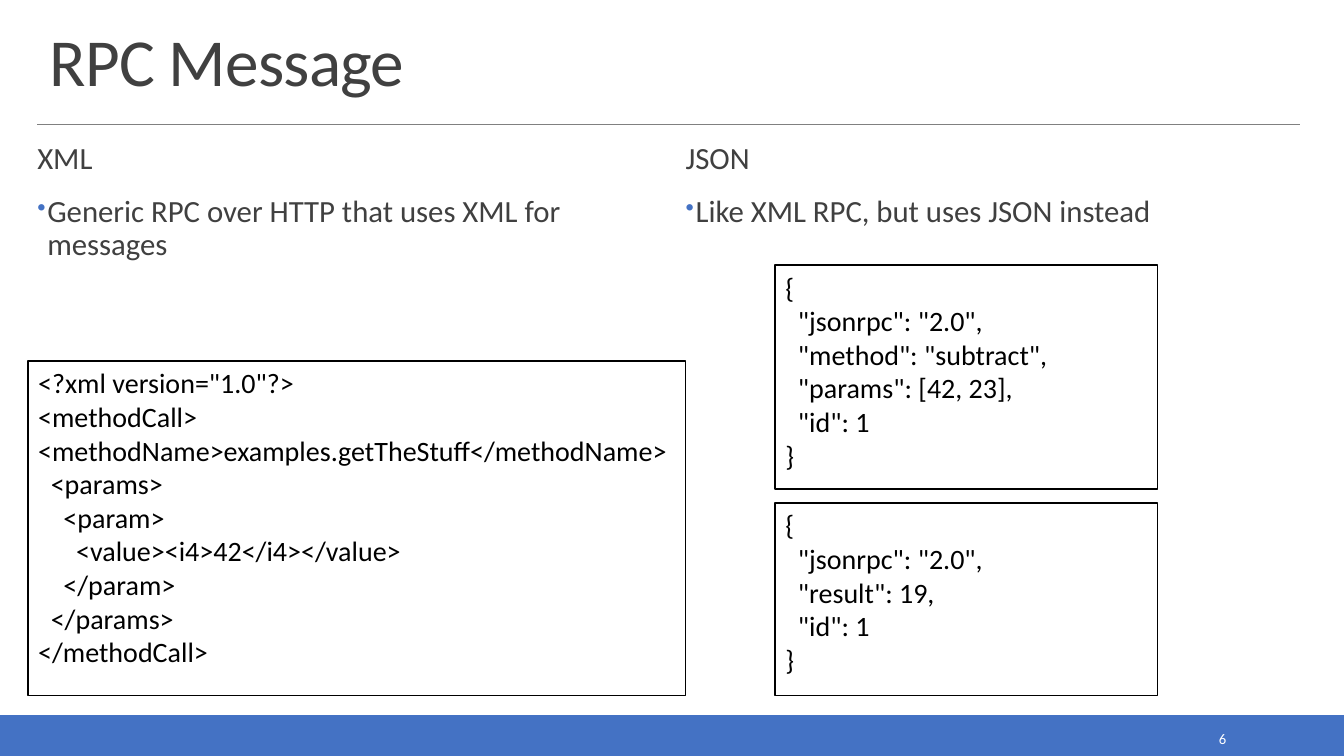
from lxml import etree
from pptx import Presentation
from pptx.dml.color import RGBColor
from pptx.enum.shapes import MSO_CONNECTOR as CONNECTOR, MSO_SHAPE as SHAPE
from pptx.enum.text import MSO_ANCHOR as ANCHOR, PP_ALIGN as ALIGN
from pptx.oxml.ns import qn
from pptx.util import Inches, Pt

FONT = "Calibri"
COLORS = {
    "accent": "4472C4",
    "rule": "808080",
    "text": "404040",
    "code": "000000",
    "white": "FFFFFF",
}

XML_CALL = """<?xml version="1.0"?>
<methodCall>
<methodName>examples.getTheStuff</methodName>
  <params>
    <param>
      <value><i4>42</i4></value>
    </param>
  </params>
</methodCall>"""

JSON_REQUEST = """{
  "jsonrpc": "2.0",
  "method": "subtract",
  "params": [42, 23],
  "id": 1
}"""

JSON_RESPONSE = """{
  "jsonrpc": "2.0",
  "result": 19,
  "id": 1
}"""


def color(name):
    return RGBColor.from_string(COLORS[name])


def add_run(paragraph, text, size, color_name):
    run = paragraph.add_run()
    run.text = text
    run.font.name = FONT
    run.font.size = Pt(size)
    run.font.color.rgb = color(color_name)
    return run


def add_box(slide, left, top, width, height, fill, line):
    shape = slide.shapes.add_shape(
        SHAPE.RECTANGLE, Inches(left), Inches(top), Inches(width), Inches(height))
    shape.shadow.inherit = False
    shape.fill.solid()
    shape.fill.fore_color.rgb = color(fill)
    shape.line.color.rgb = color(line)
    shape.line.width = Pt(1.25)
    return shape


def add_text_frame(slide, left, top, width, height, anchor=ANCHOR.TOP):
    box = slide.shapes.add_textbox(
        Inches(left), Inches(top), Inches(width), Inches(height))
    frame = box.text_frame
    frame.word_wrap = True
    frame.vertical_anchor = anchor
    return frame


def add_rule(slide, left, right, y):
    rule = slide.shapes.add_connector(
        CONNECTOR.STRAIGHT, Inches(left), Inches(y), Inches(right), Inches(y))
    rule.line.color.rgb = color("rule")
    rule.line.width = Pt(0.5)
    etree.SubElement(rule._element.spPr, qn("a:effectLst"))


def add_title(slide, text):
    frame = add_text_frame(slide, 0.39, 0.2, 12.52, 0.84, ANCHOR.BOTTOM)
    paragraph = frame.paragraphs[0]
    paragraph.line_spacing = 0.85
    run = add_run(paragraph, text, 48, "text")
    run.font._element.set("spc", "-50")


def set_bullet(paragraph):
    properties = paragraph._p.get_or_add_pPr()
    properties.set("marL", str(Inches(0.1)))
    properties.set("indent", str(Inches(-0.1)))
    bullet_color = etree.SubElement(properties, qn("a:buClr"))
    etree.SubElement(bullet_color, qn("a:srgbClr"), val=COLORS["accent"])
    etree.SubElement(properties, qn("a:buSzPct"), val="80000")
    etree.SubElement(properties, qn("a:buChar"), char="•")


def add_column(slide, left, width, heading, point):
    frame = add_text_frame(slide, left, 1.38, width, 1.51)
    frame.margin_left = frame.margin_right = 0
    frame.margin_top = frame.margin_bottom = Inches(0.04)
    heading_paragraph = frame.paragraphs[0]
    point_paragraph = frame.add_paragraph()
    for paragraph, text in ((heading_paragraph, heading), (point_paragraph, point)):
        paragraph.line_spacing = 0.9
        paragraph.space_before = Pt(12)
        paragraph.space_after = Pt(2)
        add_run(paragraph, text, 22, "text")
    set_bullet(point_paragraph)


def add_code(slide, left, top, width, height, code):
    frame = add_box(slide, left, top, width, height, "white", "code").text_frame
    frame.word_wrap = True
    frame.vertical_anchor = ANCHOR.TOP
    for index, line in enumerate(code.splitlines()):
        paragraph = frame.add_paragraph() if index else frame.paragraphs[0]
        paragraph.alignment = ALIGN.LEFT
        add_run(paragraph, line, 20, "code")


def add_page_number(slide, number):
    frame = add_text_frame(slide, 10.83, 7.19, 1.43, 0.28, ANCHOR.MIDDLE)
    paragraph = frame.paragraphs[0]
    paragraph.alignment = ALIGN.RIGHT
    add_run(paragraph, number, 10.5, "white")


def main():
    presentation = Presentation()
    presentation.slide_width = Inches(13.33)
    presentation.slide_height = Inches(7.5)
    slide = presentation.slides.add_slide(presentation.slide_layouts[6])

    # Footer band, title and rule
    add_box(slide, 0, 7.1, 13.33, 0.4, "accent", "accent")
    add_rule(slide, 0.37, 12.89, 1.23)
    add_title(slide, "RPC Message")

    # Two columns of text
    add_column(slide, 0.37, 6.23, "XML",
               "Generic RPC over HTTP that uses XML for messages")
    add_column(slide, 6.8, 6.09, "JSON", "Like XML RPC, but uses JSON instead")
    add_page_number(slide, "6")

    # Message samples
    add_code(slide, 0.28, 3.58, 6.52, 3.32, XML_CALL)
    add_code(slide, 7.69, 2.63, 3.79, 2.22, JSON_REQUEST)
    add_code(slide, 7.69, 4.99, 3.79, 1.91, JSON_RESPONSE)

    presentation.save("out.pptx")


if __name__ == "__main__":
    main()
